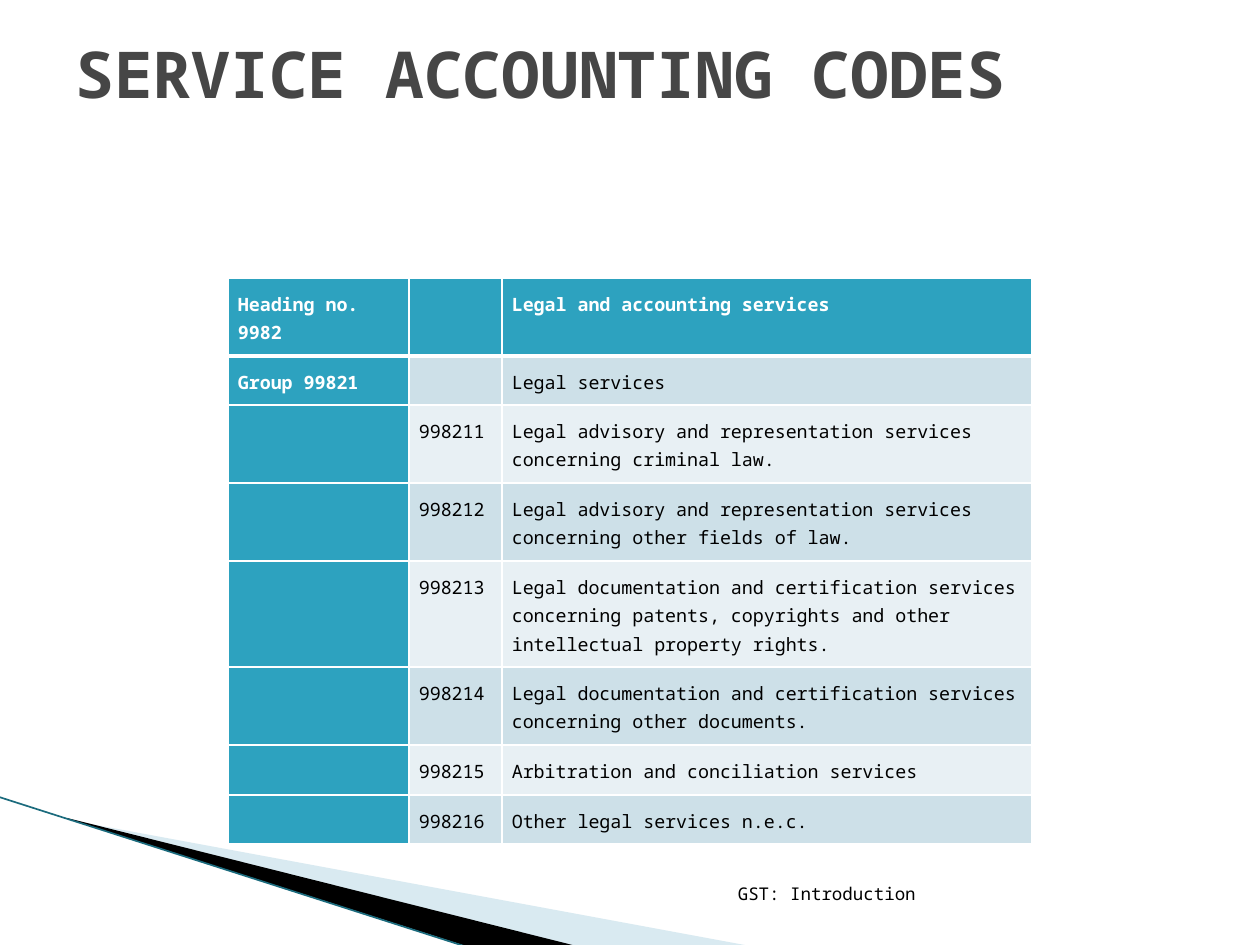
"""Build the service accounting codes slide."""
from lxml import etree
from pptx import Presentation
from pptx.dml.color import RGBColor
from pptx.enum.shapes import MSO_CONNECTOR
from pptx.enum.text import MSO_ANCHOR, PP_ALIGN
from pptx.oxml.ns import qn
from pptx.util import Pt

PX = 914400 // 126
FONT = "Noto Sans Mono"
STRAIGHT = MSO_CONNECTOR.STRAIGHT
TOP, BOTTOM = MSO_ANCHOR.TOP, MSO_ANCHOR.BOTTOM
LEFT, RIGHT = PP_ALIGN.LEFT, PP_ALIGN.RIGHT
HEX = {
    "white": "FFFFFF", "black": "000000", "title": "464646", "teal": "2DA2BF",
    "band": "CDE0E8", "pale": "E8F0F4", "wedge": "A0CBDC", "edge": "1B6B7D",
}
RGB = {name: RGBColor.from_string(value) for name, value in HEX.items()}


def write(p, text, size, color, bold=False):
    p.font.size = Pt(size)
    if text:
        r = p.add_run()
        r.text = text
        for key, value in {"name": FONT, "size": Pt(size), "bold": bold}.items():
            setattr(r.font, key, value)
        r.font.color.rgb = RGB[color]


def add_border(cell, side, width):
    ln = etree.SubElement(cell._tc.get_or_add_tcPr(), qn(f"a:ln{side}"), w=str(Pt(width)))
    fill = etree.SubElement(ln, qn("a:solidFill"))
    etree.SubElement(fill, qn("a:srgbClr"), val=HEX["white"])


prs = Presentation()
prs.slide_width, prs.slide_height = 1260 * PX, 945 * PX
s = prs.slides.add_slide(prs.slide_layouts[6])

wedges = [
    ("wedge", 40, [(69, 820), (750, 946), (575, 946), (69, 819)]),
    ("black", 100, [(67, 818), (576, 946), (469, 947), (68, 819)]),
]
for color, opacity, points in wedges:
    builder = s.shapes.build_freeform(*points[0], scale=PX)
    builder.add_line_segments(points[1:], close=True)
    sp = builder.convert_to_shape()
    sp.shadow.inherit = False
    sp.fill.solid()
    sp.fill.fore_color.rgb = RGB[color]
    sp.line.fill.background()
    if opacity < 100:
        clr = sp._element.spPr.find(".//" + qn("a:srgbClr"))
        etree.SubElement(clr, qn("a:alpha"), val=str(opacity * 1000))

edge = s.shapes.add_connector(STRAIGHT, -1 * PX, 797 * PX, 467 * PX, 947 * PX)
edge.line.color.rgb = RGB["edge"]
edge.line.width = Pt(0.95)
etree.SubElement(edge._element.spPr, qn("a:effectLst"))

rows = [
    (78, "Heading no. 9982", "", "Legal and accounting services"),
    (49, "Group 99821", "", "Legal services"),
    (78, "", "998211", "Legal advisory and representation services concerning criminal law."),
    (78, "", "998212", "Legal advisory and representation services concerning other fields of law."),
    (106, "", "998213", "Legal documentation and certification services concerning patents, "
                        "copyrights and other intellectual property rights."),
    (78, "", "998214", "Legal documentation and certification services concerning other documents."),
    (50, "", "998215", "Arbitration and conciliation services"),
    (49, "", "998216", "Other legal services n.e.c."),
]
widths = [181, 93, 530]
height = sum(row[0] for row in rows)
table = s.shapes.add_table(len(rows), len(widths), 228 * PX, 278 * PX,
                           sum(widths) * PX, height * PX).table
for col, width in zip(table.columns, widths):
    col.width = width * PX
for i, (row_height, *texts) in enumerate(rows):
    table.rows[i].height = row_height * PX
    for j, text in enumerate(texts):
        cell = table.cell(i, j)
        for side in ("left", "right", "top", "bottom"):
            setattr(cell, f"margin_{side}", 10 * PX)
        head = i == 0 or j == 0
        for side in "LRTB":
            heavy = (i, side) in ((0, "B"), (1, "T"))
            add_border(cell, side, 3 if heavy else 1)
        cell.fill.solid()
        cell.fill.fore_color.rgb = RGB["teal" if head else "band" if i % 2 else "pale"]
        p = cell.text_frame.paragraphs[0]
        p.line_spacing = 1.15
        write(p, text, 10.5, "white" if head else "black", head)

labels = [
    ("GST: Introduction", (604, 860, 324, 50), BOTTOM, RIGHT, 10, "black", False),
    ("SERVICE ACCOUNTING CODES", (63, 28, 1134, 168), TOP, LEFT, 36.9, "title", True),
]
for text, box, anchor, align, size, color, bold in labels:
    tf = s.shapes.add_textbox(*(v * PX for v in box)).text_frame
    tf.word_wrap = True
    tf.vertical_anchor = anchor
    p = tf.paragraphs[0]
    p.alignment = align
    write(p, text, size, color, bold)

prs.save("out.pptx")
